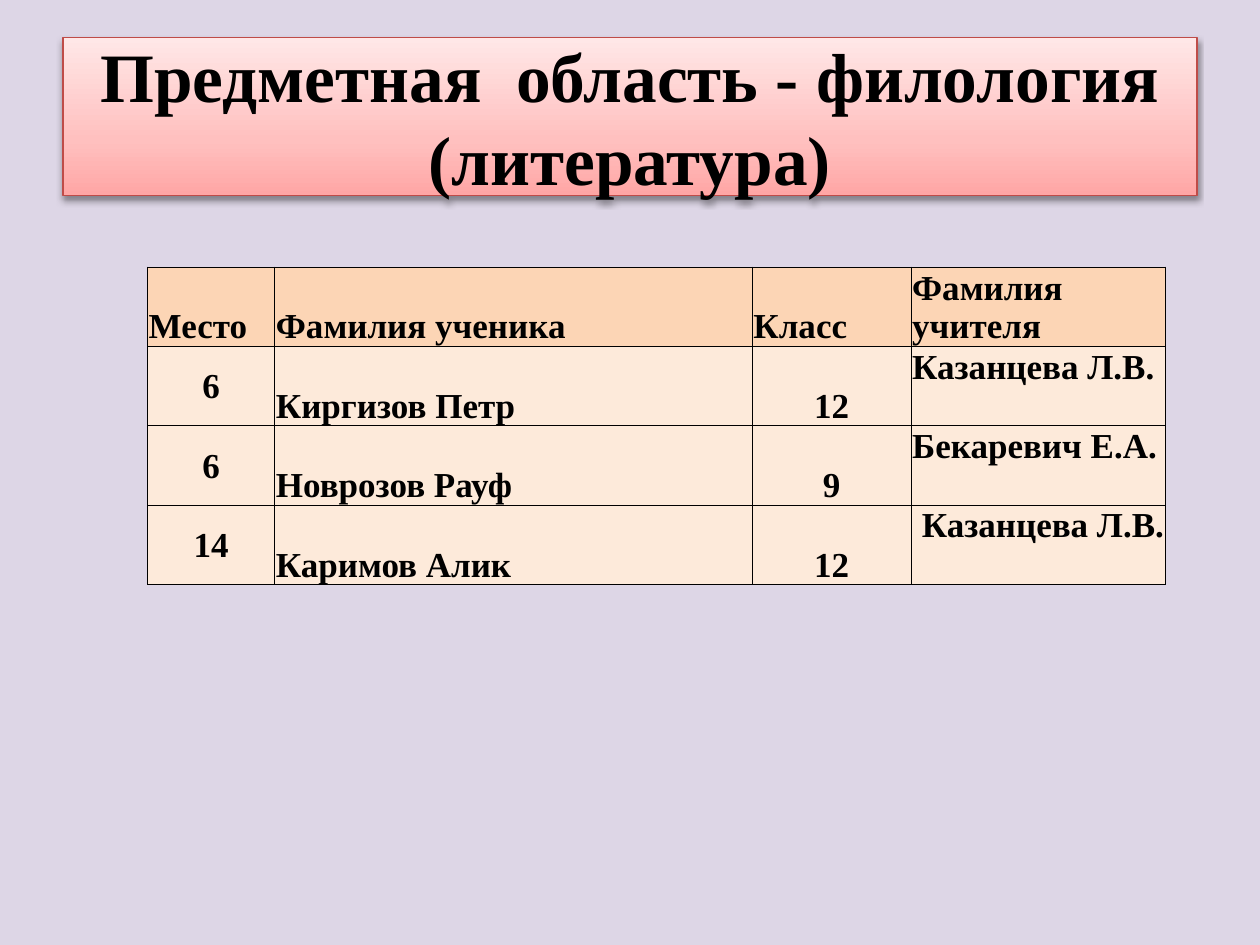
import pptx
import pptx.dml.color
import pptx.enum.shapes
import pptx.enum.text
import pptx.oxml
import pptx.oxml.ns
import pptx.util
from pptx.util import Inches

ALIGN = pptx.enum.text.PP_ALIGN
ANCHOR = pptx.enum.text.MSO_ANCHOR
FONT = "Times New Roman"
NAMESPACE = pptx.oxml.ns.nsdecls("a")

TITLE = "Предметная  область - филология (литература)"
TITLE_GRADIENT = [(0, "FFA6A5"), (35, "FFC0BF"), (100, "FFE7E7")]
ROWS = [
    ("Место", "Фамилия ученика", "Класс", "Фамилия учителя"),
    ("6", "Киргизов Петр", "12", "Казанцева Л.В."),
    ("6", "Новрозов Рауф", "9", "Бекаревич Е.А."),
    ("14", "Каримов Алик", "12", "Казанцева Л.В."),
]
COLUMN_WIDTHS = [1.01, 3.79, 1.26, 2.02]
COLUMN_ALIGNS = [ALIGN.CENTER, ALIGN.LEFT, ALIGN.CENTER, ALIGN.LEFT]
COLUMN_ANCHORS = [ANCHOR.MIDDLE, ANCHOR.BOTTOM, ANCHOR.BOTTOM, ANCHOR.TOP]
ROW_HEIGHT = 0.63


def color(value):
    return pptx.dml.color.RGBColor.from_string(value)


def style_text(paragraph, size, align):
    paragraph.alignment = align
    paragraph.font.name = FONT
    paragraph.font.size = pptx.util.Pt(size)
    paragraph.font.bold = True
    paragraph.font.color.rgb = color("000000")


def add_title(slide):
    shape = slide.shapes.add_shape(
        pptx.enum.shapes.MSO_SHAPE.RECTANGLE,
        Inches(0.5), Inches(0.3), Inches(9), Inches(1.25))
    shape.line.color.rgb = color("BF4C48")
    shape.line.width = pptx.util.Pt(0.75)
    shape.fill.gradient()
    shape.fill.gradient_angle = 90
    properties = shape._element.spPr
    stops = properties.find(".//" + pptx.oxml.ns.qn("a:gsLst"))
    stops.clear()
    for position, value in TITLE_GRADIENT:
        stops.append(pptx.oxml.parse_xml(
            f'<a:gs {NAMESPACE} pos="{position * 1000}"><a:srgbClr val="{value}"/></a:gs>'))
    shape.shadow.inherit = False
    properties.find(pptx.oxml.ns.qn("a:effectLst")).append(pptx.oxml.parse_xml(
        f'<a:outerShdw {NAMESPACE} blurRad="40000" dist="20000" dir="5400000" rotWithShape="0">'
        '<a:srgbClr val="000000"><a:alpha val="38000"/></a:srgbClr></a:outerShdw>'))
    frame = shape.text_frame
    frame.word_wrap = True
    frame.vertical_anchor = ANCHOR.MIDDLE
    frame.text = TITLE
    style_text(frame.paragraphs[0], 39.6, ALIGN.CENTER)


def add_borders(cell):
    properties = cell._tc.get_or_add_tcPr()
    for index, side in enumerate(("lnL", "lnR", "lnT", "lnB")):
        properties.insert(index, pptx.oxml.parse_xml(
            f'<a:{side} {NAMESPACE} w="6350"><a:solidFill><a:srgbClr val="000000"/>'
            f'</a:solidFill></a:{side}>'))


def add_results(slide):
    table = slide.shapes.add_table(
        len(ROWS), len(COLUMN_WIDTHS), Inches(1.17), Inches(2.12),
        Inches(sum(COLUMN_WIDTHS)), Inches(ROW_HEIGHT * len(ROWS))).table
    for column, width in zip(table.columns, COLUMN_WIDTHS):
        column.width = Inches(width)
    for row_index, texts in enumerate(ROWS):
        table.rows[row_index].height = Inches(ROW_HEIGHT)
        header = row_index == 0
        for column_index, text in enumerate(texts):
            cell = table.cell(row_index, column_index)
            cell.margin_left = cell.margin_right = cell.margin_top = Inches(0.01)
            cell.margin_bottom = 0
            cell.vertical_anchor = ANCHOR.BOTTOM if header else COLUMN_ANCHORS[column_index]
            cell.fill.solid()
            cell.fill.fore_color.rgb = color("FCD5B5" if header else "FDEADA")
            cell.text = text
            style_text(cell.text_frame.paragraphs[0], 20,
                       ALIGN.LEFT if header else COLUMN_ALIGNS[column_index])
            add_borders(cell)
    table.cell(len(ROWS) - 1, 3).text_frame.paragraphs[0].alignment = ALIGN.RIGHT


def main():
    """Build the slide with the literature results table."""
    presentation = pptx.Presentation()
    presentation.slide_width = Inches(10)
    presentation.slide_height = Inches(7.5)
    slide = presentation.slides.add_slide(presentation.slide_layouts[6])
    slide.background.fill.solid()
    slide.background.fill.fore_color.rgb = color("DDD6E6")
    add_title(slide)
    add_results(slide)
    presentation.save("out.pptx")


if __name__ == "__main__":
    main()
